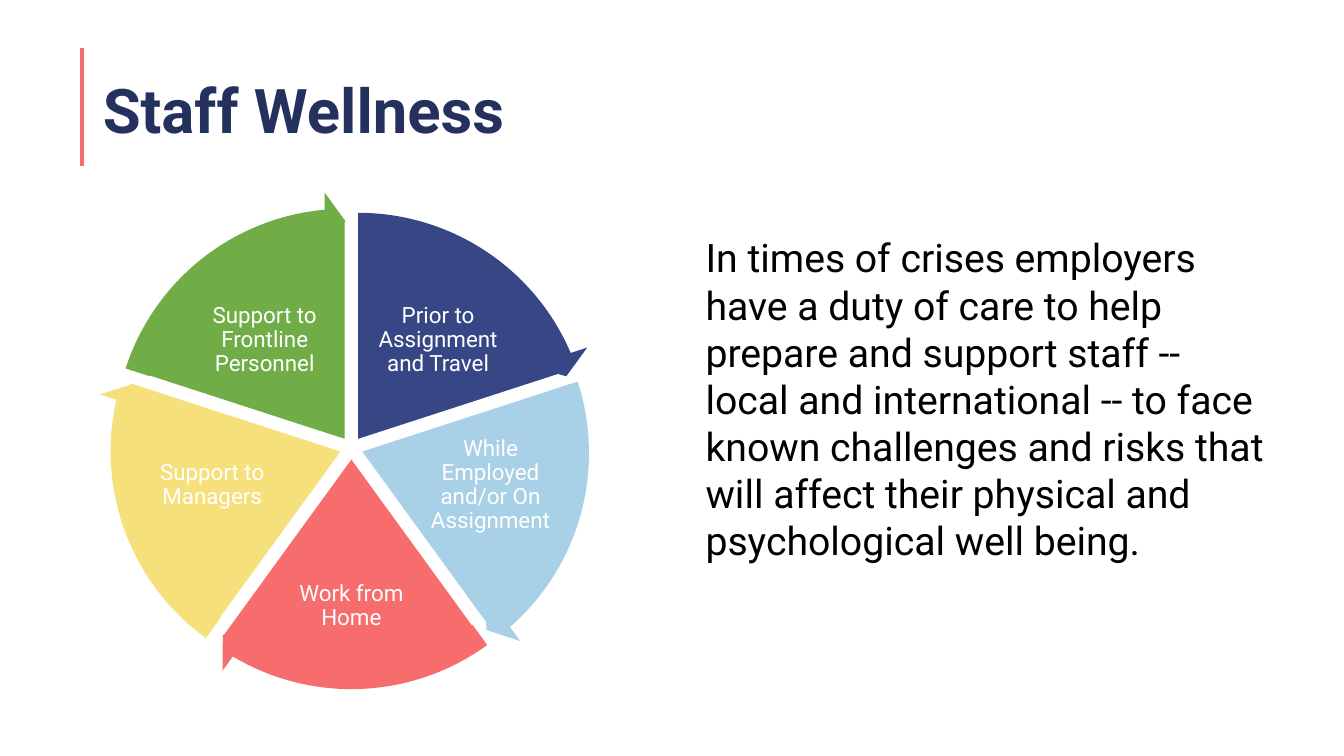
from dataclasses import dataclass
from math import cos, radians, sin

from lxml.etree import SubElement
from pptx import Presentation
from pptx.dml.color import RGBColor
from pptx.enum.shapes import MSO_CONNECTOR, MSO_SHAPE
from pptx.enum.text import MSO_ANCHOR, MSO_AUTO_SIZE, PP_ALIGN
from pptx.oxml.ns import qn
from pptx.util import Inches, Pt


@dataclass(frozen=True)
class Theme:
    font: str = "Roboto"
    heading: str = "24305E"
    text: str = "000000"
    white: str = "FFFFFF"
    navy: str = "374785"
    sky: str = "A8D0E6"
    coral: str = "F76C6C"
    yellow: str = "F5E07B"
    green: str = "70AD47"
    title_size: int = 44
    body_size: int = 28
    label_size: int = 16


THEME = Theme()

# Label boxes: centre offset from the hub, then width and height.
# Arrow nudge: shift of the arrow from the centre of its slice.
SLICES = [
    ("Prior to Assignment and Travel", THEME.navy, (0.86, -1.07, 1.41, 0.94), (0.01, 0.04)),
    ("While Employed and/or On Assignment", THEME.sky, (1.38, 0.37, 1.31, 1.05), (-0.03, 0.02)),
    ("Work from Home", THEME.coral, (0, 1.57, 1.25, 1.15), (0, 0)),
    ("Support to Managers", THEME.yellow, (-1.38, 0.37, 1.31, 1.05), (0, 0)),
    ("Support to Frontline Personnel", THEME.green, (-0.86, -1.07, 1.41, 0.94), (0, 0)),
]
BODY = (
    "In times of crises employers have a duty of care to help prepare and support "
    "staff -- local and international -- to face known challenges and risks that "
    "will affect their physical and psychological well being."
)


def rgb(color):
    return RGBColor.from_string(color)


def write(holder, text, size, color, bold=False, align=PP_ALIGN.LEFT, spacing=1.0, **frame_format):
    frame = holder.text_frame
    for name, value in {"word_wrap": True, **frame_format}.items():
        setattr(frame, name, value)
    paragraph = frame.paragraphs[0]
    paragraph.alignment = align
    paragraph.line_spacing = spacing
    run = paragraph.add_run()
    run.text = text
    for name, value in {"name": THEME.font, "size": Pt(size), "bold": bold}.items():
        setattr(run.font, name, value)
    run.font.color.rgb = rgb(color)


def centred(x, y, width, height):
    """Turn a centre and a size in inches into left, top, width, height."""
    return [Inches(v) for v in (x - width / 2, y - height / 2, width, height)]


def add_round_part(group, preset, x, y, diameter, adjustments, color):
    part = group.shapes.add_shape(preset, *centred(x, y, diameter, diameter))
    for index, value in enumerate(adjustments):
        part.adjustments[index] = value
    part.shadow.inherit = False
    part.fill.solid()
    part.fill.fore_color.rgb = rgb(color)
    return part


def add_title(slide, left, top, width, height):
    rule_x = Inches(left - 0.11)
    rule = slide.shapes.add_connector(
        MSO_CONNECTOR.STRAIGHT, rule_x, Inches(top + 0.08), rule_x, Inches(top + 1.25)
    )
    rule.line.color.rgb = rgb(THEME.coral)
    rule.line.width = Pt(3)
    SubElement(rule._element.spPr, qn("a:effectLst"))

    title = slide.shapes.title
    box = {"left": left, "top": top, "width": width, "height": height}
    for name, value in box.items():
        setattr(title, name, Inches(value))
    write(title, "Staff Wellness", THEME.title_size, THEME.heading, bold=True, spacing=0.9,
          vertical_anchor=MSO_ANCHOR.MIDDLE, auto_size=MSO_AUTO_SIZE.NONE)


def add_cycle(slide, left, top, diameter):
    """Place exploded slices with labels, then the arrow around each slice."""
    group = slide.shapes.add_group_shape()
    hub_x, hub_y = left + diameter / 2, top + diameter / 2
    explode, arrow_diameter = 0.1, diameter + 0.54
    sweep = 360 / len(SLICES)
    unit = 0.6  # adjustment value of one degree
    arrows = []

    for index, (label, color, label_box, nudge) in enumerate(SLICES):
        start = (270 + index * sweep) % 360
        end = (start + sweep) % 360
        middle = radians(start + sweep / 2)
        x, y = hub_x + explode * cos(middle), hub_y + explode * sin(middle)
        pie = add_round_part(group, MSO_SHAPE.PIE, x, y, diameter,
                             (start * unit, end * unit), color)
        pie.line.color.rgb = rgb(THEME.white)
        pie.line.width = Pt(1)

        dx, dy, width, height = label_box
        caption = group.shapes.add_textbox(*centred(hub_x + dx, hub_y + dy, width, height))
        margins = {f"margin_{side}": Inches(0.02) for side in ("left", "top", "right", "bottom")}
        write(caption, label, THEME.label_size, THEME.white, align=PP_ALIGN.CENTER,
              spacing=0.9, vertical_anchor=MSO_ANCHOR.MIDDLE, **margins)

        bend = (0.05, 3.28, end * unit - 3.28, start * unit, 0.06)
        arrows.append((x + nudge[0], y + nudge[1], arrow_diameter, bend, color))

    for arrow in arrows:
        part = add_round_part(group, MSO_SHAPE.CIRCULAR_ARROW, *arrow)
        part.line.fill.background()


def add_body(slide, left, top, width, height):
    body = slide.shapes.add_textbox(*[Inches(v) for v in (left, top, width, height)])
    write(body, BODY, THEME.body_size, THEME.text, auto_size=MSO_AUTO_SIZE.SHAPE_TO_FIT_TEXT)


def main():
    deck = Presentation()
    deck.slide_width, deck.slide_height = Inches(13.33), Inches(7.5)
    slide = deck.slides.add_slide(deck.slide_layouts.get_by_name("Title Only"))
    add_title(slide, 0.92, 0.4, 11.5, 1.45)
    add_cycle(slide, 1.29, 2.25, 4.39)
    add_body(slide, 6.9, 2.27, 5.8, 3.4)
    deck.save("out.pptx")


if __name__ == "__main__":
    main()
